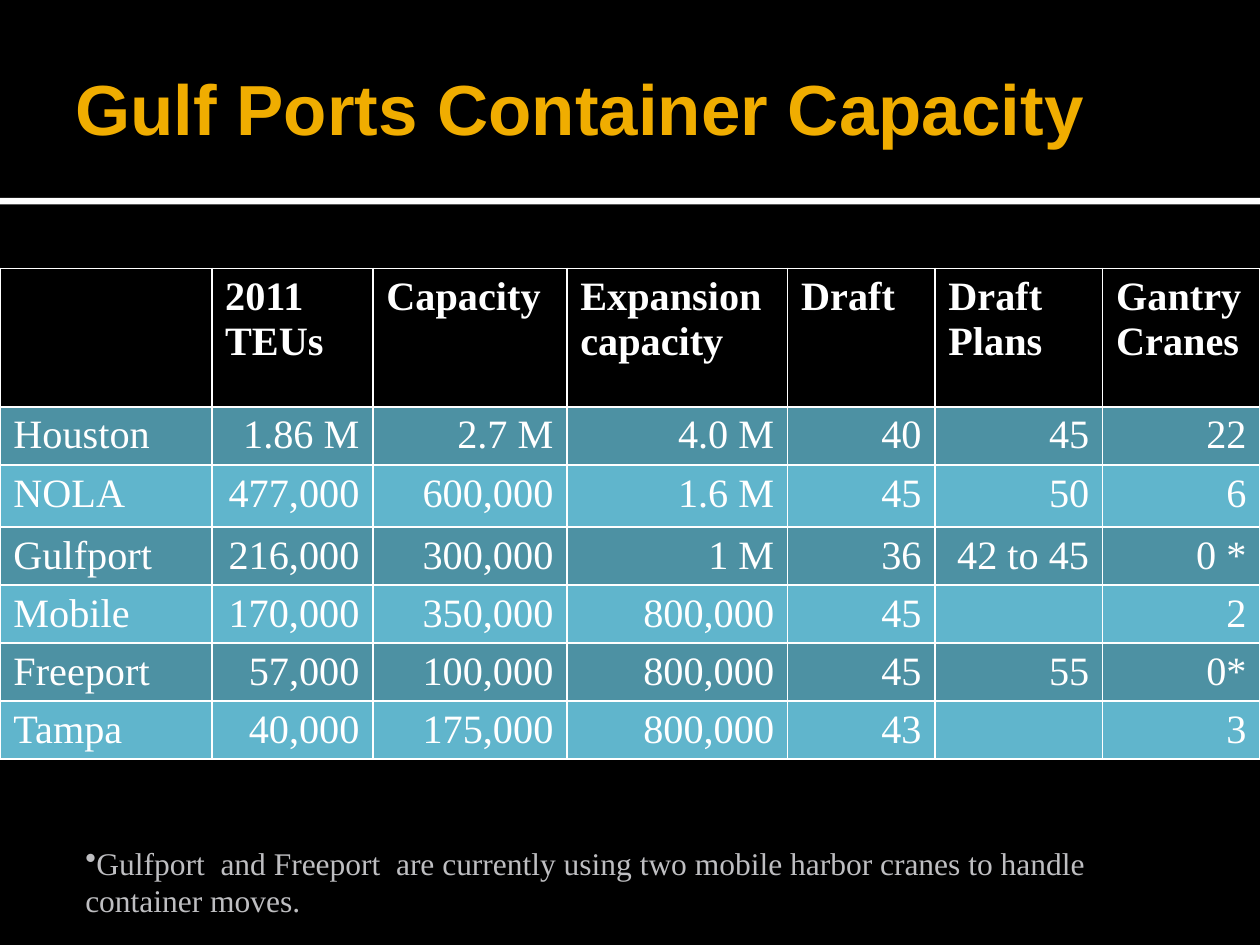
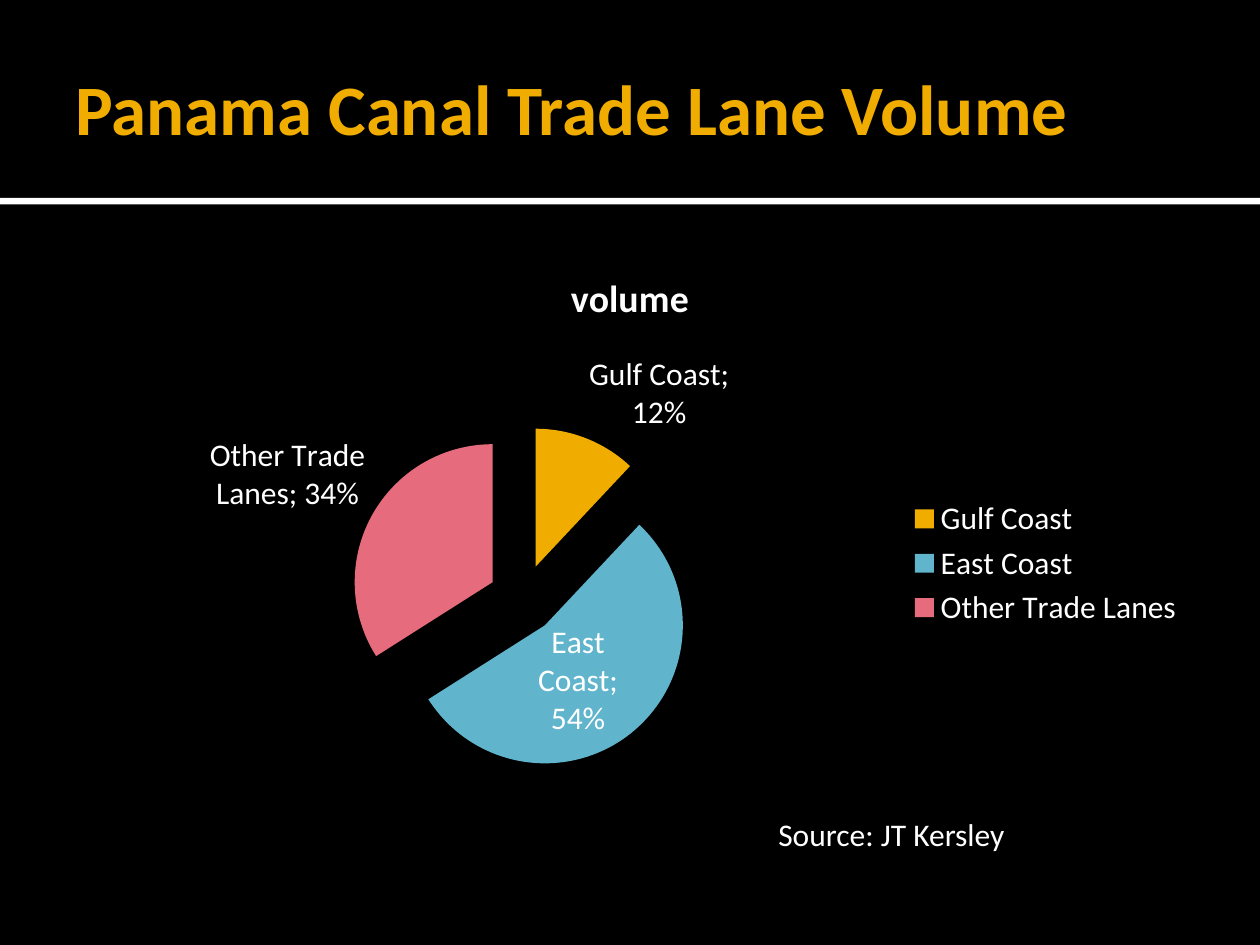
"""Build two slides on Gulf port container capacity and Panama Canal trade lanes."""
from lxml.etree import SubElement
from pptx import Presentation
from pptx.chart.data import CategoryChartData
from pptx.dml.color import RGBColor
from pptx.enum.chart import XL_CHART_TYPE, XL_LABEL_POSITION, XL_LEGEND_POSITION
from pptx.enum.shapes import MSO_SHAPE
from pptx.enum.text import MSO_ANCHOR, MSO_AUTO_SIZE, PP_ALIGN
from pptx.oxml import parse_xml
from pptx.oxml.ns import nsdecls, qn
from pptx.util import Cm, Pt

BLACK = RGBColor(0x00, 0x00, 0x00)
WHITE = RGBColor(0xFF, 0xFF, 0xFF)
GOLD = RGBColor(0xF0, 0xAD, 0x00)
BLUE = RGBColor(0x60, 0xB5, 0xCC)
TEAL = RGBColor(0x4D, 0x91, 0xA3)
PINK = RGBColor(0xE6, 0x6C, 0x7D)
GREY = RGBColor(0xBE, 0xBE, 0xC1)
SERIF = "Times New Roman"
SANS = "Calibri"


def write(frame, text, font=SANS, size=18, color=WHITE, bold=False, align=PP_ALIGN.LEFT):
    paragraph = frame.paragraphs[0]
    paragraph.alignment = align
    run = paragraph.add_run()
    run.text = text
    run.font.name = font
    run.font.size = Pt(size)
    run.font.bold = bold
    run.font.color.rgb = color
    return paragraph


def add_border(cell):
    properties = cell._tc.get_or_add_tcPr()
    for side in ("a:lnL", "a:lnR", "a:lnT", "a:lnB"):
        line = SubElement(properties, qn(side), w=str(Pt(1)))
        fill = SubElement(line, qn("a:solidFill"))
        SubElement(fill, qn("a:srgbClr"), val=str(WHITE))


presentation = Presentation()
presentation.slide_width = Cm(25.4)
presentation.slide_height = Cm(19.05)
background = presentation.slide_master.background.fill
background.solid()
background.fore_color.rgb = BLACK

slides = []
for title_text, title_font in (
    ("Gulf Ports Container Capacity", "Arial"),
    ("Panama Canal Trade Lane Volume", SANS),
):
    slide = presentation.slides.add_slide(presentation.slide_layouts[5])
    title = slide.shapes.title
    title.left, title.top, title.width, title.height = Cm(1.27), Cm(0.43), Cm(22.86), Cm(3.48)
    frame = title.text_frame
    frame.auto_size = MSO_AUTO_SIZE.NONE
    frame.vertical_anchor = MSO_ANCHOR.MIDDLE
    frame.margin_left, frame.margin_right = Cm(0.25), Cm(0.13)
    write(frame, title_text, font=title_font, size=40.5, color=GOLD, bold=True)
    rule = slide.shapes.add_shape(MSO_SHAPE.RECTANGLE, 0, Cm(3.99), presentation.slide_width, Cm(0.13))
    rule.shadow.inherit = False
    rule.fill.solid()
    rule.fill.fore_color.rgb = WHITE
    rule.line.fill.background()
    slides.append(slide)

ports_slide, canal_slide = slides

port_rows = [
    ("", "2011 TEUs", "Capacity", "Expansion capacity", "Draft", "Draft Plans", "Gantry Cranes"),
    ("Houston", "1.86 M", "2.7 M", "4.0 M", "40", "45", "22"),
    ("NOLA", "477,000", "600,000", "1.6 M", "45", "50", "6"),
    ("Gulfport", "216,000", "300,000", "1 M", "36", "42 to 45", "0 *"),
    ("Mobile", "170,000", "350,000", "800,000", "45", "", "2"),
    ("Freeport", "57,000", "100,000", "800,000", "45", "55", "0*"),
    ("Tampa", "40,000", "175,000", "800,000", "43", "", "3"),
]
column_widths = (4.27, 3.25, 3.91, 4.45, 2.97, 3.38, 3.17)
row_heights = (2.79, 1.17, 1.25, 1.17, 1.17, 1.17, 1.17)
table = ports_slide.shapes.add_table(
    len(port_rows), len(column_widths), 0, Cm(5.41), Cm(25.4), Cm(sum(row_heights))
).table
for column, width in zip(table.columns, column_widths):
    column.width = Cm(width)
for row_index, port_row in enumerate(port_rows):
    table.rows[row_index].height = Cm(row_heights[row_index])
    is_header = row_index == 0
    row_color = BLACK if is_header else (BLUE, TEAL)[row_index % 2]
    for column_index, text in enumerate(port_row):
        cell = table.cell(row_index, column_index)
        cell.margin_left = cell.margin_right = Cm(0.27)
        add_border(cell)
        cell.fill.solid()
        cell.fill.fore_color.rgb = row_color
        if text:
            align = PP_ALIGN.LEFT if is_header or column_index == 0 else PP_ALIGN.RIGHT
            write(cell.text_frame, text, font=SERIF, size=23, bold=is_header, align=align)

footnote = ports_slide.shapes.add_textbox(Cm(1.47), Cm(16.88), Cm(22.23), Cm(1.76)).text_frame
footnote.word_wrap = True
footnote_paragraph = write(
    footnote,
    "Gulfport  and Freeport  are currently using two mobile harbor cranes to handle container moves.",
    font=SERIF, color=GREY,
)
SubElement(footnote_paragraph._p.get_or_add_pPr(), qn("a:buChar"), char="•")

volume_data = CategoryChartData(number_format="0%")
volume_data.categories = ["Gulf Coast", "East Coast", "Other Trade Lanes"]
volume_data.add_series("volume", (0.12, 0.54, 0.34))
chart = canal_slide.shapes.add_chart(
    XL_CHART_TYPE.PIE, Cm(1.27), Cm(4.93), Cm(22.86), Cm(12.85), volume_data
).chart
chart.font.name = SANS
chart.font.size = Pt(18)
chart.font.color.rgb = WHITE
chart.has_title = True
write(chart.chart_title.text_frame, "volume", size=21.6, bold=True, align=PP_ALIGN.CENTER)
chart.has_legend = True
chart.legend.position = XL_LEGEND_POSITION.RIGHT
chart.legend.include_in_layout = False

pie = chart.plots[0]
pie.vary_by_categories = True
series = pie.series[0]
for point_index, color in enumerate((GOLD, BLUE, PINK)):
    point_fill = series.points[point_index].format.fill
    point_fill.solid()
    point_fill.fore_color.rgb = color
explosion = parse_xml(f'<c:explosion {nsdecls("c")} val="25"/>')
series._element.find(qn("c:dPt")).addprevious(explosion)
labels = series.data_labels
labels.show_value = True
labels.show_category_name = True
labels.number_format = "0%"
labels.number_format_is_linked = False
labels.position = XL_LABEL_POSITION.BEST_FIT

source = canal_slide.shapes.add_textbox(Cm(15.44), Cm(16.31), Cm(8.46), Cm(1.02)).text_frame
source.word_wrap = True
write(source, "Source: JT Kersley")

presentation.save("out.pptx")
